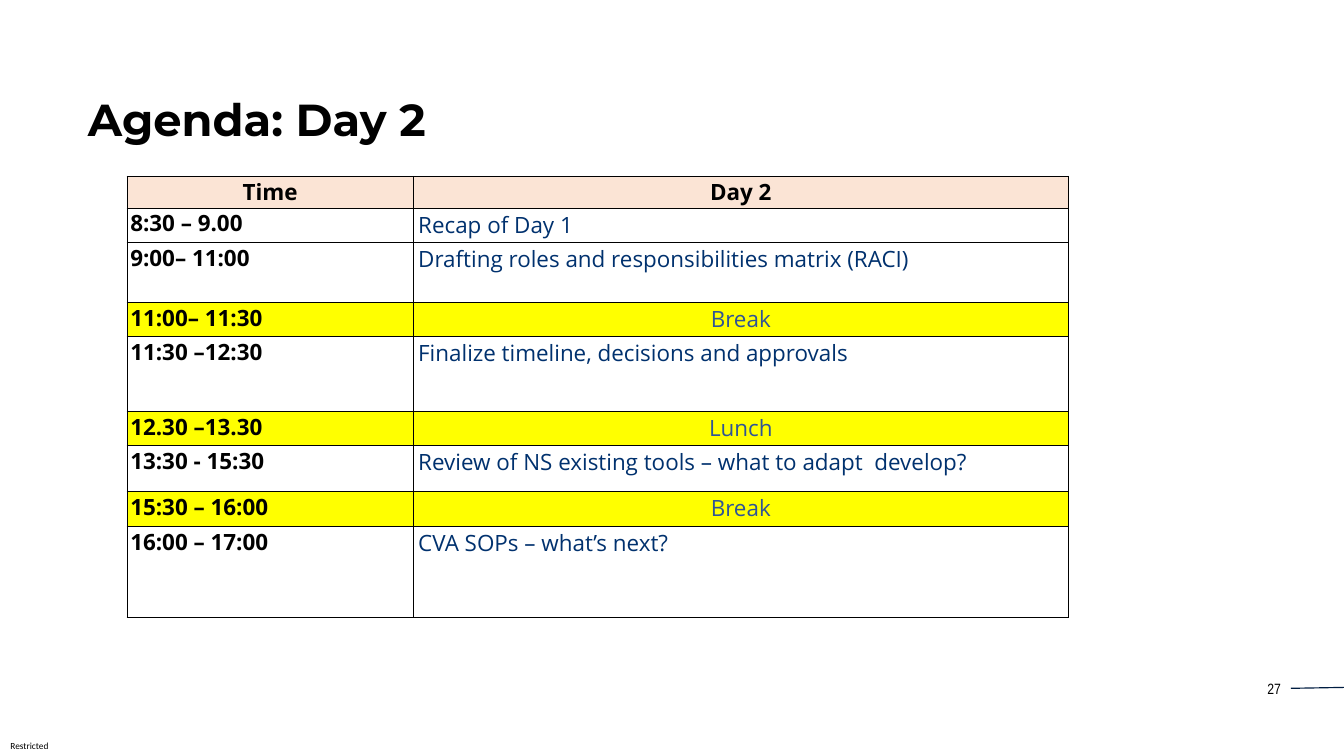
from lxml.etree import SubElement
from pptx import Presentation
from pptx.dml.color import RGBColor
from pptx.enum.shapes import MSO_CONNECTOR
from pptx.enum.text import MSO_ANCHOR, MSO_AUTO_SIZE, PP_ALIGN
from pptx.oxml.ns import qn
from pptx.util import Pt

BLACK = RGBColor(0x00, 0x00, 0x00)
WHITE = RGBColor(0xFF, 0xFF, 0xFF)
PEACH = RGBColor(0xFB, 0xE4, 0xD5)
YELLOW = RGBColor(0xFF, 0xFF, 0x00)
NAVY = RGBColor(0x00, 0x31, 0x6E)
BLUE = RGBColor(0x2F, 0x54, 0x96)
DARK_NAVY = RGBColor(0x00, 0x1D, 0x41)

COLUMN_WIDTHS = [306.7, 702]
HEADER = ("Time", "Day 2", 33)
SESSIONS = [
    ("8:30 – 9.00", "Recap of Day 1", 36),
    ("9:00– 11:00", "Drafting roles and responsibilities matrix (RACI)", 64.5),
    ("11:00– 11:30", "Break", 36),
    ("11:30 –12:30", "Finalize timeline, decisions and approvals", 80),
    ("12.30 –13.30", "Lunch", 36),
    ("13:30 - 15:30", "Review of NS existing tools – what to adapt  develop?", 49),
    ("15:30 – 16:00", "Break", 38),
    ("16:00 – 17:00", "CVA SOPs – what’s next?", 97),
]
PAUSES = {"Break", "Lunch"}


class AgendaSlide:
    table_font = "Open Sans"
    table_size = 24
    border_width = 0.5

    def __init__(self, prs):
        self.s = prs.slides.add_slide(prs.slide_layouts[5])

    def format(self, p, font, size, color=BLACK, bold=False, align=PP_ALIGN.LEFT):
        p.alignment = align
        for r in p.runs:
            r.font.name = font
            r.font.size = Pt(size)
            r.font.bold = bold
            r.font.color.rgb = color

    def title(self, text, x, y, w, h):
        sp = self.s.shapes.title
        sp.left, sp.top, sp.width, sp.height = Pt(x), Pt(y), Pt(w), Pt(h)
        tf = sp.text_frame
        tf.text = text
        tf.auto_size = MSO_AUTO_SIZE.NONE
        tf.vertical_anchor = MSO_ANCHOR.TOP
        self.format(tf.paragraphs[0], "Montserrat", 48, bold=True)

    def text(self, text, x, y, w, h, font, size, align=PP_ALIGN.LEFT, inset=None):
        tf = self.s.shapes.add_textbox(Pt(x), Pt(y), Pt(w), Pt(h)).text_frame
        tf.word_wrap = True
        tf.text = text
        if inset is not None:
            tf.margin_left = tf.margin_right = Pt(inset)
            tf.margin_top = tf.margin_bottom = Pt(inset)
            tf.vertical_anchor = MSO_ANCHOR.MIDDLE
        self.format(tf.paragraphs[0], font, size, align=align)

    def line(self, x1, y1, x2, y2, color, width):
        cx = self.s.shapes.add_connector(
            MSO_CONNECTOR.STRAIGHT, Pt(x1), Pt(y1), Pt(x2), Pt(y2))
        cx.line.color.rgb = color
        cx.line.width = Pt(width)
        SubElement(cx._element.spPr, qn("a:effectLst"))

    def borders(self, cell):
        tcPr = cell._tc.get_or_add_tcPr()
        for side in ("a:lnL", "a:lnR", "a:lnT", "a:lnB"):
            ln = SubElement(tcPr, qn(side), w=str(Pt(self.border_width)))
            fill = SubElement(ln, qn("a:solidFill"))
            SubElement(fill, qn("a:srgbClr"), val=str(BLACK))

    def cell(self, cell, text, fill, color, bold, align, margins, anchor):
        self.borders(cell)
        cell.fill.solid()
        cell.fill.fore_color.rgb = fill
        cell.margin_left = cell.margin_right = Pt(margins[0])
        cell.margin_top = cell.margin_bottom = Pt(margins[1])
        cell.vertical_anchor = anchor
        cell.text_frame.text = text
        p = cell.text_frame.paragraphs[0]
        p.line_spacing = 0.9
        p.space_after = Pt(10)
        self.format(p, self.table_font, self.table_size, color, bold, align)

    def agenda(self, x, y, widths, header, sessions):
        rows = [header, *sessions]
        heights = [row[2] for row in rows]
        table = self.s.shapes.add_table(
            len(rows), len(widths), Pt(x), Pt(y), Pt(sum(widths)), Pt(sum(heights))).table
        for column, width in zip(table.columns, widths):
            column.width = Pt(width)
        tight, roomy = (3.6, 2.16), (5.4, 3.6)
        left, center = PP_ALIGN.LEFT, PP_ALIGN.CENTER
        top, middle = MSO_ANCHOR.TOP, MSO_ANCHOR.MIDDLE
        for i, (time, topic, height) in enumerate(rows):
            table.rows[i].height = Pt(height)
            first, second = table.cell(i, 0), table.cell(i, 1)
            if i == 0:
                for c, text in ((first, time), (second, topic)):
                    self.cell(c, text, PEACH, BLACK, True, center, tight, middle)
                continue
            pause = topic in PAUSES
            fill = YELLOW if pause else WHITE
            self.cell(first, time, fill, BLACK, True, left, tight, top)
            self.cell(second, topic, fill, BLUE if pause else NAVY, False,
                      center if pause else left, roomy, top)


def main():
    prs = Presentation()
    prs.slide_width, prs.slide_height = Pt(1440), Pt(810)
    slide = AgendaSlide(prs)
    slide.title("Agenda: Day 2", 87, 95, 476, 65.5)
    slide.agenda(136, 188.8, COLUMN_WIDTHS, HEADER, SESSIONS)
    slide.text("Restricted", 0, 789, 63, 21, "Calibri", 10, PP_ALIGN.CENTER, inset=0)
    slide.text("27", 1327.5, 724.5, 52, 26.5, "Arial Narrow", 16, PP_ALIGN.RIGHT)
    slide.line(1383, 737.5, 1440, 736.5, DARK_NAVY, 1.25)
    prs.save("out.pptx")


if __name__ == "__main__":
    main()
